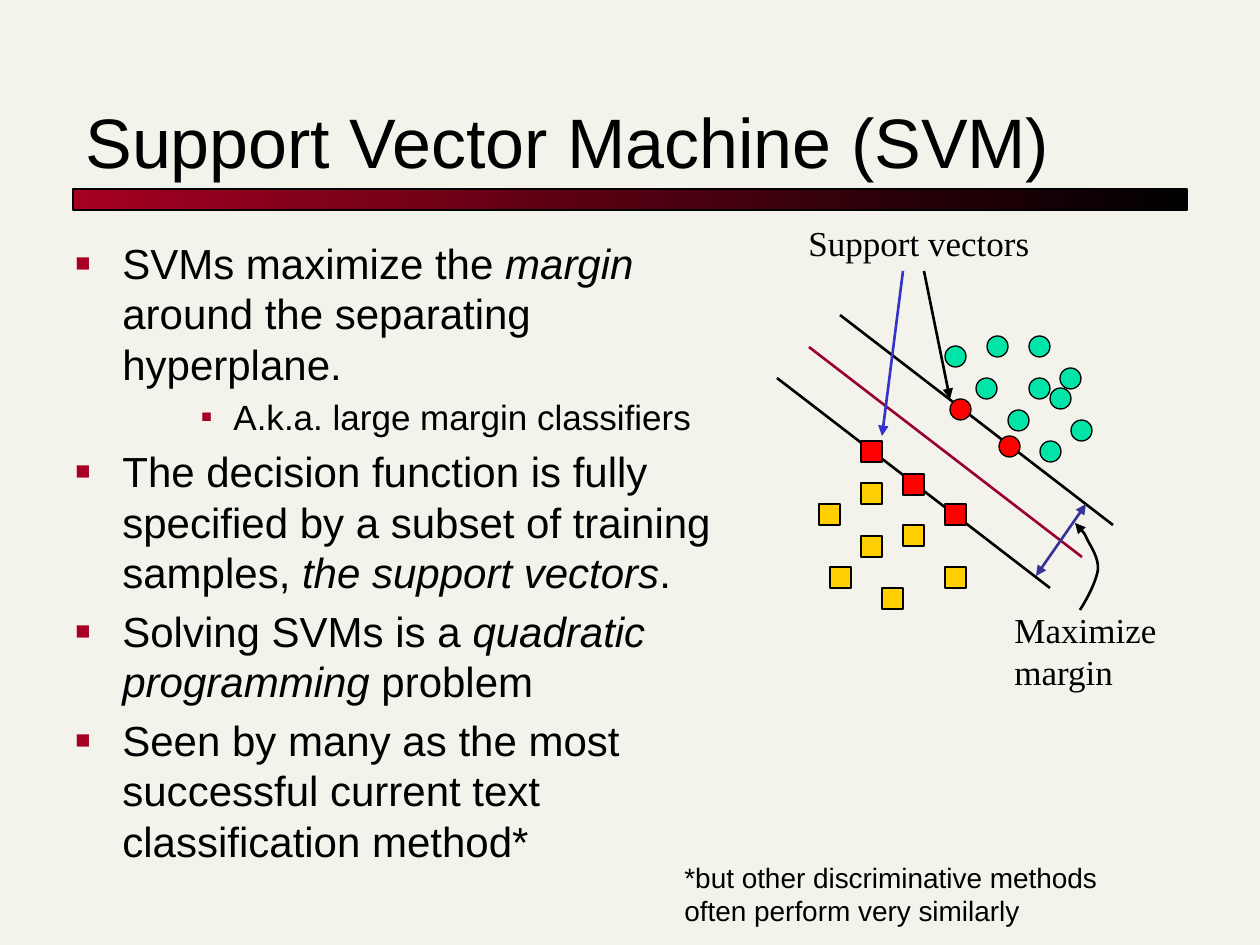
from lxml.etree import SubElement
from pptx import Presentation
from pptx.dml.color import RGBColor
from pptx.enum.shapes import MSO_CONNECTOR as Link, MSO_SHAPE as Kind
from pptx.enum.text import MSO_ANCHOR as Anchor, MSO_AUTO_SIZE as Fit
from pptx.oxml.ns import qn
from pptx.util import Pt

UNIT = 914400 / 126
BLACK, WINE, RED = "000000", "A50021", "FF0000"
GREEN, GOLD = "00E4A8", "FFCF01"


def px(*nums):
    return [round(n * UNIT) for n in nums]


def tint(code):
    return RGBColor.from_string(code)


def apply(item, form):
    for name, value in form.items():
        setattr(item, name, value)


class Deck:
    """Holds the style and the current slide, and draws each kind of element."""

    def __init__(self, wide, high, back):
        self.file = Presentation()
        size = px(wide, high)
        apply(self.file, {"slide_width": size[0], "slide_height": size[1]})
        self.slide = self.file.slides.add_slide(self.file.slide_layouts[6])
        self.slide.background.fill.solid()
        self.slide.background.fill.fore_color.rgb = tint(back)
        self.items = self.slide.shapes

    def edge(self, line, color, width, ends=()):
        line.color.rgb = tint(color)
        line.width = Pt(width)
        for end in ends:
            SubElement(line._get_or_add_ln(), qn(f"a:{end}End"), type="triangle")

    def shape(self, kind, box, fill):
        item = self.items.add_shape(kind, *px(*box))
        item.shadow.inherit = False
        if isinstance(fill, tuple):
            item.fill.gradient()
            item.fill.gradient_angle = 0
            for stop, color, spot in zip(item.fill.gradient_stops, fill, (0, 1)):
                apply(stop, {"position": spot})
                stop.color.rgb = tint(color)
        else:
            item.fill.solid()
            item.fill.fore_color.rgb = tint(fill)
        self.edge(item.line, BLACK, 0.75)

    def marks(self, kind, fill, spots, size=21):
        for left, top in spots:
            self.shape(kind, (left, top, size, size), fill)

    def line(self, start, stop, color, ends=()):
        item = self.items.add_connector(Link.STRAIGHT, *px(*start, *stop))
        SubElement(item._element.spPr, qn("a:effectLst"))
        self.edge(item.line, color, 1.5, ends)
        ln = item.line._get_or_add_ln()
        ln.addnext(item._element.spPr.find(qn("a:effectLst")))

    def curve(self, start, knots, color, ends):
        pen = self.items.build_freeform(*start, scale=UNIT)
        pen.add_line_segments(knots, close=False)
        item = pen.convert_to_shape()
        item.shadow.inherit = False
        item.fill.background()
        self.edge(item.line, color, 1.5, ends)
        path = next(item._element.iter(qn("a:path")))
        steps = path.findall(qn("a:lnTo"))
        for i in range(0, len(steps), 3):
            bend = SubElement(path, qn("a:cubicBezTo"))
            for step in steps[i:i + 3]:
                bend.append(step[0])
                path.remove(step)

    def frame(self, box, **form):
        text = self.items.add_textbox(*px(*box)).text_frame
        apply(text, {"word_wrap": True, **form})
        return text

    def para(self, text, words, first, size, face="Arial"):
        para = text.paragraphs[0] if first else text.add_paragraph()
        for i, part in enumerate(words.split("_")):
            run = para.add_run()
            run.text = part
            apply(run.font, {"size": Pt(size), "name": face, "italic": i % 2 == 1})
            run.font.color.rgb = tint(BLACK)
        return para

    def text(self, box, rows, size, face="Arial", **form):
        text = self.frame(box, **form)
        for i, words in enumerate(rows):
            self.para(text, words, i == 0, size, face)

    def list(self, box, rows):
        text = self.frame(box)
        for i, (level, words) in enumerate(rows):
            size, dent, hang, ratio = ((24, 47, 47, 60), (20, 158, 32, 50))[level]
            para = self.para(text, words, i == 0, size)
            apply(para, {"level": level, "space_before": Pt(size * 0.2)})
            prop = para._p.get_or_add_pPr()
            prop.set("marL", str(px(dent)[0]))
            prop.set("indent", str(px(-hang)[0]))
            SubElement(SubElement(prop, qn("a:buClr")), qn("a:srgbClr"), val=WINE)
            SubElement(prop, qn("a:buSzPct"), val=str(ratio * 1000))
            SubElement(prop, qn("a:buFont"), typeface="Arial")
            SubElement(prop, qn("a:buChar"), char="■")


def main():
    deck = Deck(1260, 945, "F4F3EB")
    deck.shape(Kind.RECTANGLE, (73, 189, 1114, 21), (WINE, BLACK))
    deck.text((73, 53, 1113, 136), ["Support Vector Machine (SVM)"], 40,
              vertical_anchor=Anchor.BOTTOM)

    deck.marks(Kind.OVAL, GREEN, [
        (987, 336), (1029, 378), (1008, 410), (1071, 420), (1040, 441),
        (1029, 336), (945, 346), (1050, 388), (1060, 368), (976, 378)])
    deck.marks(Kind.RECTANGLE, GOLD, [
        (861, 483), (882, 588), (903, 525), (945, 567),
        (819, 504), (861, 536), (830, 567)])

    for left, top, color in ((809, 347, "990033"), (840, 315, BLACK),
                             (777, 378, BLACK)):
        deck.line((left, top), (left + 273, top + 210), color)

    label = {"face": "Times New Roman", "word_wrap": False,
             "auto_size": Fit.SHAPE_TO_FIT_TEXT}
    deck.text((796, 215, 246, 54), ["Support vectors"], 20, **label)
    deck.line((903, 271), (882, 436), "3333CC", ["tail"])
    deck.line((924, 271), (950, 399), BLACK, ["tail"])
    deck.line((1036, 576), (1086, 504), "333399", ["head", "tail"])
    deck.text((1002, 602, 168, 97), ["Maximize", "margin"], 20, **label)
    deck.curve((1080, 610), [
        (1089, 596), (1096, 581), (1098, 570), (1099, 558), (1091, 547),
        (1087, 539), (1084, 532), (1077, 525), (1075, 523)], BLACK, ["tail"])

    deck.marks(Kind.OVAL, RED, [(950, 399), (999, 436)])
    deck.marks(Kind.RECTANGLE, RED, [(903, 474), (945, 504), (861, 441)])

    deck.list((63, 231, 672, 672), [
        (0, "SVMs maximize the _margin_ around the separating hyperplane."),
        (1, "A.k.a. large margin classifiers"),
        (0, "The decision function is fully specified by a subset of training "
            "samples, _the support vectors_."),
        (0, "Solving SVMs is a _quadratic programming_ problem"),
        (0, "Seen by many as the most successful current text "
            "classification method*")])
    deck.text((672, 854, 451, 81),
              ["*but other discriminative methods often perform very similarly"],
              16, auto_size=Fit.SHAPE_TO_FIT_TEXT)
    deck.file.save("out.pptx")


if __name__ == "__main__":
    main()
